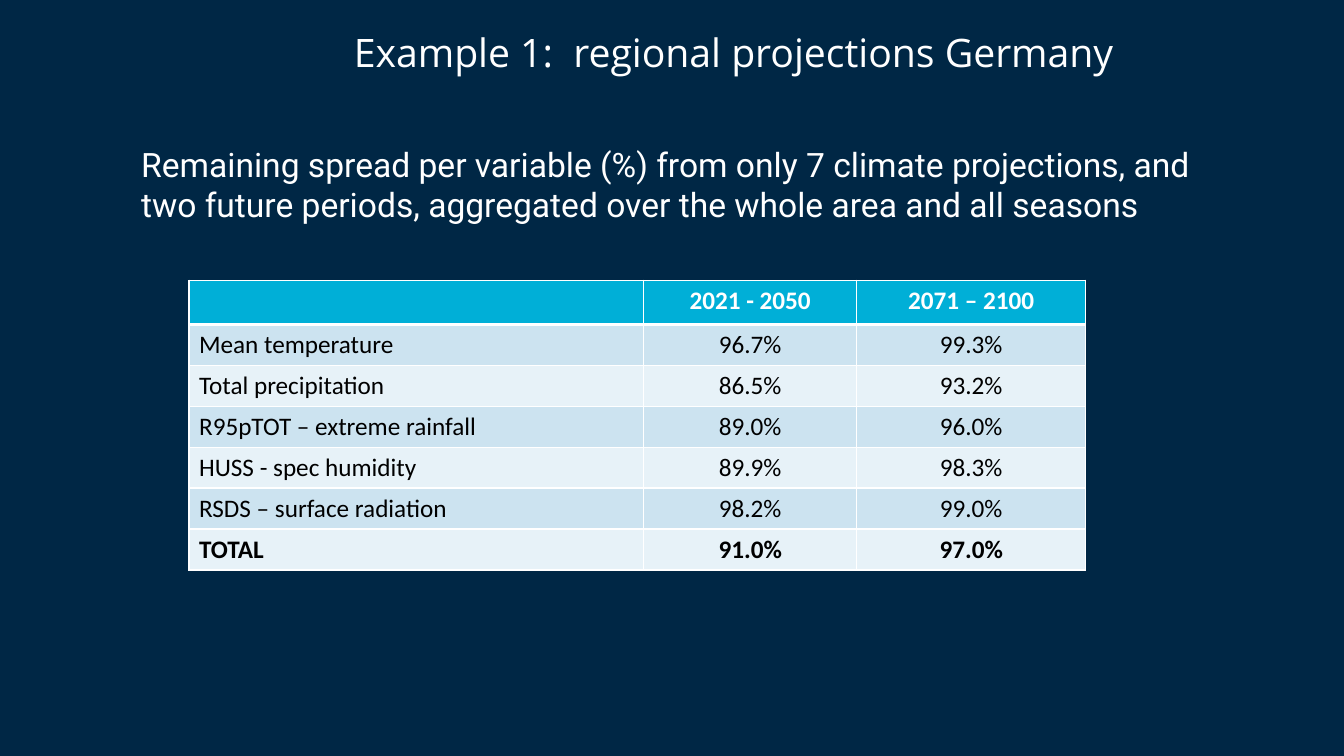
from dataclasses import dataclass

from lxml.etree import SubElement
from pptx import Presentation
from pptx.dml.color import RGBColor
from pptx.enum.text import MSO_ANCHOR, MSO_AUTO_SIZE, PP_ALIGN
from pptx.oxml.ns import qn
from pptx.slide import Slide
from pptx.table import _Cell
from pptx.text.text import TextFrame
from pptx.util import Emu, Pt


@dataclass(frozen=True)
class Theme:
    background: str = "002745"
    light: str = "FFFFFF"
    dark: str = "000000"
    header: str = "00AFD7"
    bands: tuple[str, str] = ("CCE3F0", "E7F2F8")
    title_font: str = "Open Sans"
    body_font: str = "Roboto"
    table_font: str = "Calibri"
    title_size: int = 28
    body_size: int = 24
    table_size: int = 18
    border: int = 1
    header_border: int = 3


@dataclass(frozen=True)
class Box:
    left: int
    top: int
    width: int
    height: int

    def emu(self) -> tuple[Emu, Emu, Emu, Emu]:
        return px(self.left), px(self.top), px(self.width), px(self.height)


@dataclass(frozen=True)
class SpreadRow:
    variable: str
    near_future: str
    far_future: str
    bold: bool = False

    def texts(self) -> tuple[str, str, str]:
        return self.variable, self.near_future, self.far_future


THEME = Theme()
EMU_PER_PX = 9525
TITLE_BOX = Box(337, 1, 745, 96)
SUMMARY_BOX = Box(125, 132, 1055, 87)
COLUMN_WIDTHS = (433, 203, 218)
HEADER_HEIGHT, ROW_HEIGHT = 42, 39

TITLE = "Example 1:  regional projections Germany"
SUMMARY = (
    "Remaining spread per variable (%) from only 7 climate projections, and "
    "two future periods, aggregated over the whole area and all seasons"
)
SPREAD = (
    SpreadRow("", "2021 - 2050", "2071 – 2100", bold=True),
    SpreadRow("Mean temperature", "96.7%", "99.3%"),
    SpreadRow("Total precipitation", "86.5%", "93.2%"),
    SpreadRow("R95pTOT – extreme rainfall", "89.0%", "96.0%"),
    SpreadRow("HUSS - spec humidity", "89.9%", "98.3%"),
    SpreadRow("RSDS – surface radiation", "98.2%", "99.0%"),
    SpreadRow("TOTAL", "91.0%", "97.0%", bold=True),
)
TABLE_BOX = Box(180, 267, sum(COLUMN_WIDTHS), HEADER_HEIGHT + ROW_HEIGHT * (len(SPREAD) - 1))


def px(length: int) -> Emu:
    return Emu(length * EMU_PER_PX)


def write(frame: TextFrame, text: str, font: str, size: int, color: str,
          align: PP_ALIGN = PP_ALIGN.LEFT, bold: bool = False) -> None:
    frame.text = text
    paragraph = frame.paragraphs[0]
    paragraph.alignment = align
    for target in (paragraph, *paragraph.runs):
        target.font.name = font
        target.font.size = Pt(size)
        target.font.bold = bold
        target.font.color.rgb = RGBColor.from_string(color)


def add_borders(cell: _Cell, top: int, bottom: int) -> None:
    """Draw all four cell borders; the side borders have the normal width."""
    properties = cell._tc.get_or_add_tcPr()
    widths = {"a:lnL": THEME.border, "a:lnR": THEME.border, "a:lnT": top, "a:lnB": bottom}
    for tag, width in widths.items():
        line = SubElement(properties, qn(tag), w=str(Pt(width)))
        SubElement(SubElement(line, qn("a:solidFill")), qn("a:srgbClr"), val=THEME.light)


def add_title(slide: Slide) -> None:
    title = slide.shapes.title
    title.left, title.top, title.width, title.height = TITLE_BOX.emu()
    frame = title.text_frame
    frame.margin_left = frame.margin_right = frame.margin_top = frame.margin_bottom = 0
    frame.vertical_anchor = MSO_ANCHOR.MIDDLE
    frame.auto_size = MSO_AUTO_SIZE.NONE
    write(frame, TITLE, THEME.title_font, THEME.title_size, THEME.light)


def add_spread_table(slide: Slide) -> None:
    table = slide.shapes.add_table(len(SPREAD), len(COLUMN_WIDTHS), *TABLE_BOX.emu()).table
    table.horz_banding = False
    for column, width in zip(table.columns, COLUMN_WIDTHS):
        column.width = px(width)
    for index, (row, spread) in enumerate(zip(table.rows, SPREAD)):
        is_header = index == 0
        row.height = px(HEADER_HEIGHT if is_header else ROW_HEIGHT)
        fill = THEME.header if is_header else THEME.bands[(index - 1) % 2]
        color = THEME.light if is_header else THEME.dark
        top = THEME.header_border if index == 1 else THEME.border
        bottom = THEME.header_border if is_header else THEME.border
        for position, (cell, text) in enumerate(zip(row.cells, spread.texts())):
            align = PP_ALIGN.CENTER if position else PP_ALIGN.LEFT
            write(cell.text_frame, text, THEME.table_font, THEME.table_size, color,
                  align, spread.bold)
            add_borders(cell, top, bottom)
            cell.fill.solid()
            cell.fill.fore_color.rgb = RGBColor.from_string(fill)


def add_summary(slide: Slide) -> None:
    frame = slide.shapes.add_textbox(*SUMMARY_BOX.emu()).text_frame
    frame.word_wrap = True
    frame.auto_size = MSO_AUTO_SIZE.SHAPE_TO_FIT_TEXT
    write(frame, SUMMARY, THEME.body_font, THEME.body_size, THEME.light)


def main() -> None:
    presentation = Presentation()
    presentation.slide_width, presentation.slide_height = px(1280), px(720)
    slide = presentation.slides.add_slide(presentation.slide_layouts.get_by_name("Title Only"))
    slide.background.fill.solid()
    slide.background.fill.fore_color.rgb = RGBColor.from_string(THEME.background)
    add_title(slide)
    add_spread_table(slide)
    add_summary(slide)
    presentation.save("out.pptx")


if __name__ == "__main__":
    main()
